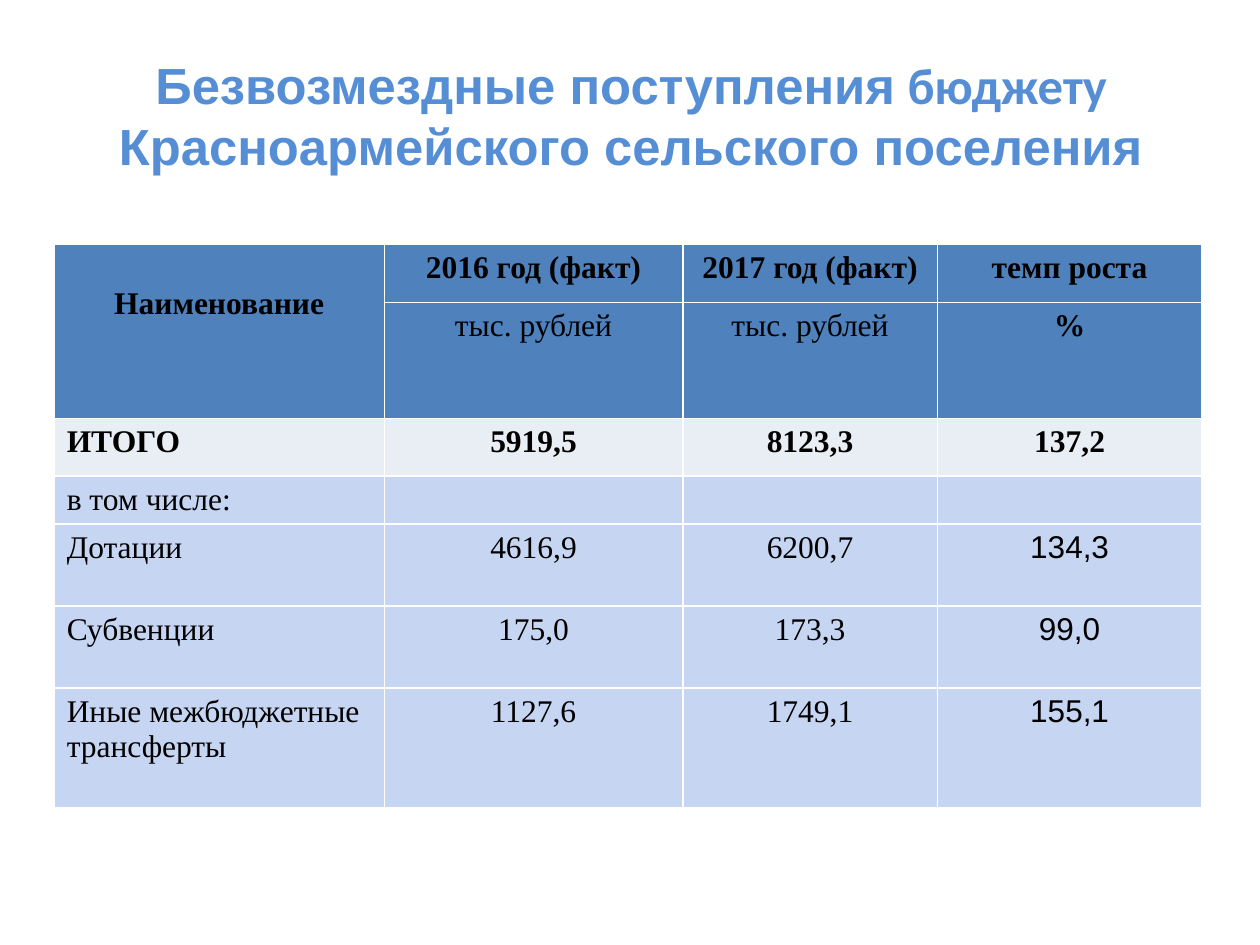
from lxml.etree import SubElement
from pptx import Presentation
from pptx.dml.color import RGBColor
from pptx.enum.text import MSO_ANCHOR, PP_ALIGN
from pptx.oxml.ns import qn
from pptx.util import Inches, Pt

COLORS = {
    "title": "558ED5",
    "text": "000000",
    "header": "4F81BD",
    "total": "E9EDF4",
    "body": "C6D5F2",
    "border": "FFFFFF",
}
SERIF = "Times New Roman"


def add_run(paragraph, text, **font_values):
    color = font_values.pop("color")
    run = paragraph.add_run()
    run.text = text
    for attribute, value in font_values.items():
        setattr(run.font, attribute, value)
    run.font.color.rgb = RGBColor.from_string(COLORS[color])


def add_borders(cell):
    """Draw a thin line on all four sides, ahead of the cell's fill."""
    properties = cell._tc.get_or_add_tcPr()
    for position, side in enumerate(("a:lnL", "a:lnR", "a:lnT", "a:lnB")):
        line = SubElement(properties, qn(side), w=str(Pt(1)))
        fill = SubElement(line, qn("a:solidFill"))
        SubElement(fill, qn("a:srgbClr"), val=COLORS["border"])
        properties.insert(position, line)


prs = Presentation()
prs.slide_width, prs.slide_height = Inches(10), Inches(7.5)
slide = prs.slides.add_slide(prs.slide_layouts[5])

# Title
title = slide.shapes.title
title.left, title.top = Inches(0.51), Inches(0.36)
title.width, title.height = Inches(9), Inches(1.1)
title.text_frame.vertical_anchor = MSO_ANCHOR.MIDDLE
heading = title.text_frame.paragraphs[0]
heading.alignment = PP_ALIGN.CENTER
for text, face in (
    ("Безвозмездные поступления", "Arial"),
    (" бюджету ", "Calibri"),
    ("Красноармейского сельского поселения", "Arial"),
):
    add_run(heading, text, name=face, size=Pt(29), bold=True, color="title")

# Budget table
column_widths = (2.62, 2.37, 2.02, 2.1)
row_heights = (0.46, 0.92, 0.46, 0.38, 0.65, 0.65, 0.95)
row_fills = ["header"] * 2 + ["total"] + ["body"] * 4
budget = (
    ("Наименование", "2016 год (факт)", "2017 год (факт)", "темп роста"),
    ("", "тыс. рублей", "тыс. рублей", "%"),
    ("ИТОГО", "5919,5", "8123,3", "137,2"),
    ("в том числе:", "", "", ""),
    ("Дотации", "4616,9", "6200,7", "134,3"),
    ("Субвенции", "175,0", "173,3", "99,0"),
    ("Иные межбюджетные трансферты", "1127,6", "1749,1", "155,1"),
)
bold_rows = (0, 2)
growth_column = 3

table = slide.shapes.add_table(
    len(row_heights), len(column_widths), Inches(0.43), Inches(1.94),
    Inches(sum(column_widths)), Inches(sum(row_heights)),
).table
for column, width in zip(table.columns, column_widths):
    column.width = Inches(width)
for row, height in zip(table.rows, row_heights):
    row.height = Inches(height)

for r, values in enumerate(budget):
    for c, text in enumerate(values):
        cell = table.cell(r, c)
        cell.fill.solid()
        cell.fill.fore_color.rgb = RGBColor.from_string(COLORS[row_fills[r]])
        add_borders(cell)
        if not text:
            cell.margin_top = cell.margin_bottom = 0
            continue
        paragraph = cell.text_frame.paragraphs[0]
        is_header = row_fills[r] == "header"
        paragraph.alignment = PP_ALIGN.CENTER if c or is_header else PP_ALIGN.LEFT
        add_run(
            paragraph, text, size=Pt(18), color="text",
            name="Arial" if c == growth_column and r > 3 else SERIF,
            bold=r in bold_rows or text == "%",
        )

name_header = table.cell(0, 0)
name_header.merge(table.cell(1, 0))
name_header.margin_top = Inches(0.33)

prs.save("out.pptx")
